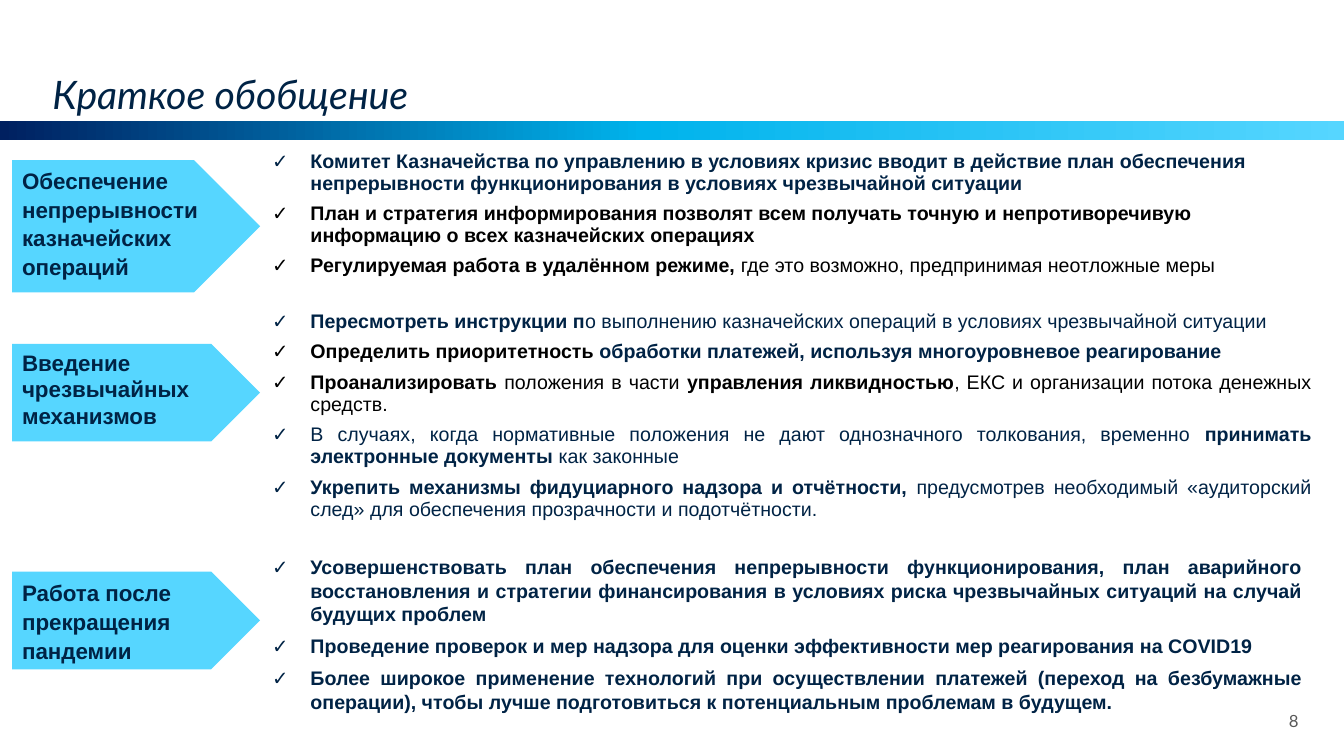
"""Build a summary slide: three stages as arrows, each with a checklist table."""
from copy import deepcopy
from typing import Any, NamedTuple

from lxml import etree
from pptx import Presentation
from pptx.dml.color import RGBColor
from pptx.enum.shapes import MSO_SHAPE
from pptx.enum.text import MSO_ANCHOR, MSO_AUTO_SIZE, PP_ALIGN
from pptx.oxml.ns import qn
from pptx.util import Inches, Pt

RECTANGLE, PENTAGON = MSO_SHAPE.RECTANGLE, MSO_SHAPE.PENTAGON
TOP, MIDDLE, BOTTOM = MSO_ANCHOR.TOP, MSO_ANCHOR.MIDDLE, MSO_ANCHOR.BOTTOM
LEFT, RIGHT, JUSTIFY = PP_ALIGN.LEFT, PP_ALIGN.RIGHT, PP_ALIGN.JUSTIFY
NO_AUTOFIT = MSO_AUTO_SIZE.NONE

WIDTH, HEIGHT = Inches(13.33), Inches(7.5)
NAVY, BLACK, SKY, GREY, WHITE = "002345", "000000", "56D6FF", "595959", "FFFFFF"
BAND_STOPS = ((0, "002060"), (0.48, "00B3EC"), (1, SKY))
ARROW_LEFT, ARROW_WIDTH, LIST_LEFT = 0.9, 18.45, 19.35
INDENT = Inches(0.38)
NO_MARGINS = dict.fromkeys(("margin_left", "margin_top", "margin_right", "margin_bottom"), 0)
CELL_MARGINS = NO_MARGINS | {"margin_left": Inches(0.12), "margin_right": Inches(0.12)}
LIST_SPACING = {"space_before": Pt(3), "space_after": Pt(3)}
WIDE_SPACING = {"line_spacing": 1.07, "space_before": Pt(6), "space_after": Pt(6)}


class Area(NamedTuple):
    """A place in percent of the slide's width and height."""

    left: float
    top: float
    width: float
    height: float


class Span(NamedTuple):
    """A stretch of text in one format."""

    text: str
    bold: bool = True
    color: str = NAVY


class Stage(NamedTuple):
    """An arrow with its checklist."""

    name: str
    arrow_top: float
    arrow_height: float
    anchor: Any
    arrow_format: dict[str, Any]
    list_area: Area
    list_format: dict[str, Any]
    items: tuple[tuple[Span, ...], ...]


STAGES = (
    Stage("Обеспечение непрерывности казначейских операций", 21.2, 17.47, TOP, WIDE_SPACING,
          Area(LIST_LEFT, 19.87, 79.14, 28.53), LIST_SPACING | {"alignment": LEFT}, (
        (Span("Комитет Казначейства по управлению в условиях кризис вводит в действие план "
              "обеспечения непрерывности функционирования в условиях чрезвычайной ситуации"),),
        (Span("План и стратегия информирования позволят всем получать точную и непротиворечивую "
              "информацию о всех казначейских операциях", color=BLACK),),
        (Span("Регулируемая работа в удалённом режиме,", color=BLACK),
         Span(" где это возможно, предпринимая неотложные меры", False, BLACK)),
    )),
    Stage("Введение чрезвычайных механизмов", 45.47, 12.93, TOP, {"space_before": Pt(8)},
          Area(LIST_LEFT, 41.07, 79.14, 37.73), LIST_SPACING | {"alignment": JUSTIFY}, (
        (Span("Пересмотреть инструкции п"),
         Span("о выполнению казначейских операций в условиях чрезвычайной ситуации", False)),
        (Span("Определить приоритетность", color=BLACK),
         Span(" обработки платежей, используя многоуровневое реагирование")),
        (Span("Проанализировать", color=BLACK),
         Span(" положения в части ", False, BLACK),
         Span("управления ликвидностью", color=BLACK),
         Span(", ЕКС и организации потока денежных средств.", False, BLACK)),
        (Span("В случаях, когда нормативные положения не дают однозначного толкования, "
              "временно ", False),
         Span("принимать электронные документы "), Span("как законные", False)),
        (Span("Укрепить механизмы фидуциарного надзора и отчётности, "),
         Span("предусмотрев необходимый «аудиторский след» для обеспечения прозрачности "
              "и подотчётности.", False)),
    )),
    Stage("Работа после прекращения пандемии", 75.6, 12.93, MIDDLE, WIDE_SPACING,
          Area(LIST_LEFT, 73.47, 78.47, 27.6),
          LIST_SPACING | {"alignment": JUSTIFY, "line_spacing": 1.07}, (
        (Span("Усовершенствовать план обеспечения непрерывности функционирования, план "
              "аварийного восстановления и стратегии финансирования в условиях риска "
              "чрезвычайных ситуаций на случай будущих проблем"),),
        (Span("Проведение проверок и мер надзора для оценки эффективности мер реагирования "
              "на COVID19"),),
        (Span("Более широкое применение технологий при осуществлении платежей (переход на "
              "безбумажные операции), чтобы лучше подготовиться к потенциальным проблемам "
              "в будущем."),),
    )),
)


def hex_color(value: str) -> RGBColor:
    """Turn a hex string into a colour."""
    return RGBColor.from_string(value)


def apply(target: Any, values: dict[str, Any]) -> None:
    """Set each named attribute of the target."""
    for name, value in values.items():
        setattr(target, name, value)


def place(area: Area) -> tuple[int, int, int, int]:
    """Turn percentages into slide lengths."""
    scales = (WIDTH, HEIGHT, WIDTH, HEIGHT)
    return tuple(round(share * scale / 100) for share, scale in zip(area, scales))


def write(para: Any, spans: tuple[Span, ...], size: float, font: str = "Arial",
          italic: bool = False, **layout: Any) -> None:
    """Write formatted spans into a paragraph."""
    apply(para, layout)
    for span in spans:
        run = para.add_run()
        run.text = span.text
        apply(run.font, {"size": Pt(size), "name": font, "bold": span.bold, "italic": italic})
        run.font.color.rgb = hex_color(span.color)


def add_check(para: Any) -> None:
    """Give a paragraph a hanging check mark."""
    properties = para._p.get_or_add_pPr()
    properties.set("marL", str(INDENT))
    properties.set("indent", str(-INDENT))
    etree.SubElement(properties, qn("a:buFont"), typeface="Arial")
    etree.SubElement(properties, qn("a:buChar"), char="✓")


def add_borders(cell: Any) -> None:
    """Draw thin white borders round a cell."""
    properties = cell._tc.get_or_add_tcPr()
    for side in ("lnL", "lnR", "lnT", "lnB"):
        line = etree.SubElement(properties, qn(f"a:{side}"), w=str(Pt(1)))
        fill = etree.SubElement(line, qn("a:solidFill"))
        etree.SubElement(fill, qn("a:srgbClr"), val=WHITE)


def add_plain_shape(page: Any, kind: Any, area: Area) -> Any:
    """Add a preset shape with no line or shadow."""
    shape = page.shapes.add_shape(kind, *place(area))
    shape.shadow.inherit = False
    shape.line.fill.background()
    return shape


def add_band(page: Any) -> None:
    """Draw the gradient band under the title."""
    band = add_plain_shape(page, RECTANGLE, Area(0, 16, 100, 2.53))
    band.fill.gradient()
    band.fill.gradient_angle = 0
    stops = band.element.spPr.find(f".//{qn('a:gsLst')}")
    stops.append(deepcopy(stops[0]))
    for stop, (position, color) in zip(band.fill.gradient_stops, BAND_STOPS):
        stop.position = position
        stop.color.rgb = hex_color(color)


def add_title(page: Any) -> None:
    """Move and fill the title placeholder."""
    title = page.shapes.title
    apply(title, dict(zip(("left", "top", "width", "height"),
                          place(Area(3.9, 4.4, 92.57, 11.07)))))
    apply(title.text_frame, NO_MARGINS | {"vertical_anchor": BOTTOM, "auto_size": NO_AUTOFIT})
    write(title.text_frame.paragraphs[0], (Span("Краткое обобщение", False),), 28, "Lato",
          italic=True, alignment=LEFT)


def add_page_number(page: Any) -> None:
    """Write the page number in the corner."""
    frame = page.shapes.add_textbox(*place(Area(93.17, 92.67, 3.45, 5.33))).text_frame
    apply(frame, NO_MARGINS | {"vertical_anchor": MIDDLE, "word_wrap": True})
    write(frame.paragraphs[0], (Span("8", False, GREY),), 12, "Lato", alignment=RIGHT)


def add_checklist(page: Any, stage: Stage) -> None:
    """Add the one-cell table with a stage's points."""
    table = page.shapes.add_table(1, 1, *place(stage.list_area)).table
    apply(table, {"first_row": False, "horz_banding": False})
    cell = table.cell(0, 0)
    add_borders(cell)
    cell.fill.background()
    apply(cell, CELL_MARGINS)
    frame = cell.text_frame
    for index, spans in enumerate(stage.items):
        para = frame.add_paragraph() if index else frame.paragraphs[0]
        add_check(para)
        write(para, spans, 14, **stage.list_format)


def add_arrow(page: Any, stage: Stage) -> None:
    """Add the arrow that names a stage."""
    area = Area(ARROW_LEFT, stage.arrow_top, ARROW_WIDTH, stage.arrow_height)
    arrow = add_plain_shape(page, PENTAGON, area)
    arrow.fill.solid()
    arrow.fill.fore_color.rgb = hex_color(SKY)
    apply(arrow.text_frame, {"word_wrap": True, "vertical_anchor": stage.anchor})
    write(arrow.text_frame.paragraphs[0], (Span(stage.name),), 16, alignment=LEFT,
          **stage.arrow_format)


def main() -> None:
    """Build and save the deck."""
    deck = Presentation()
    apply(deck, {"slide_width": WIDTH, "slide_height": HEIGHT})
    page = deck.slides.add_slide(deck.slide_layouts.get_by_name("Title Only"))
    add_band(page)
    add_title(page)
    add_page_number(page)
    for stage in STAGES:
        add_checklist(page, stage)
        add_arrow(page, stage)
    deck.save("out.pptx")


if __name__ == "__main__":
    main()
